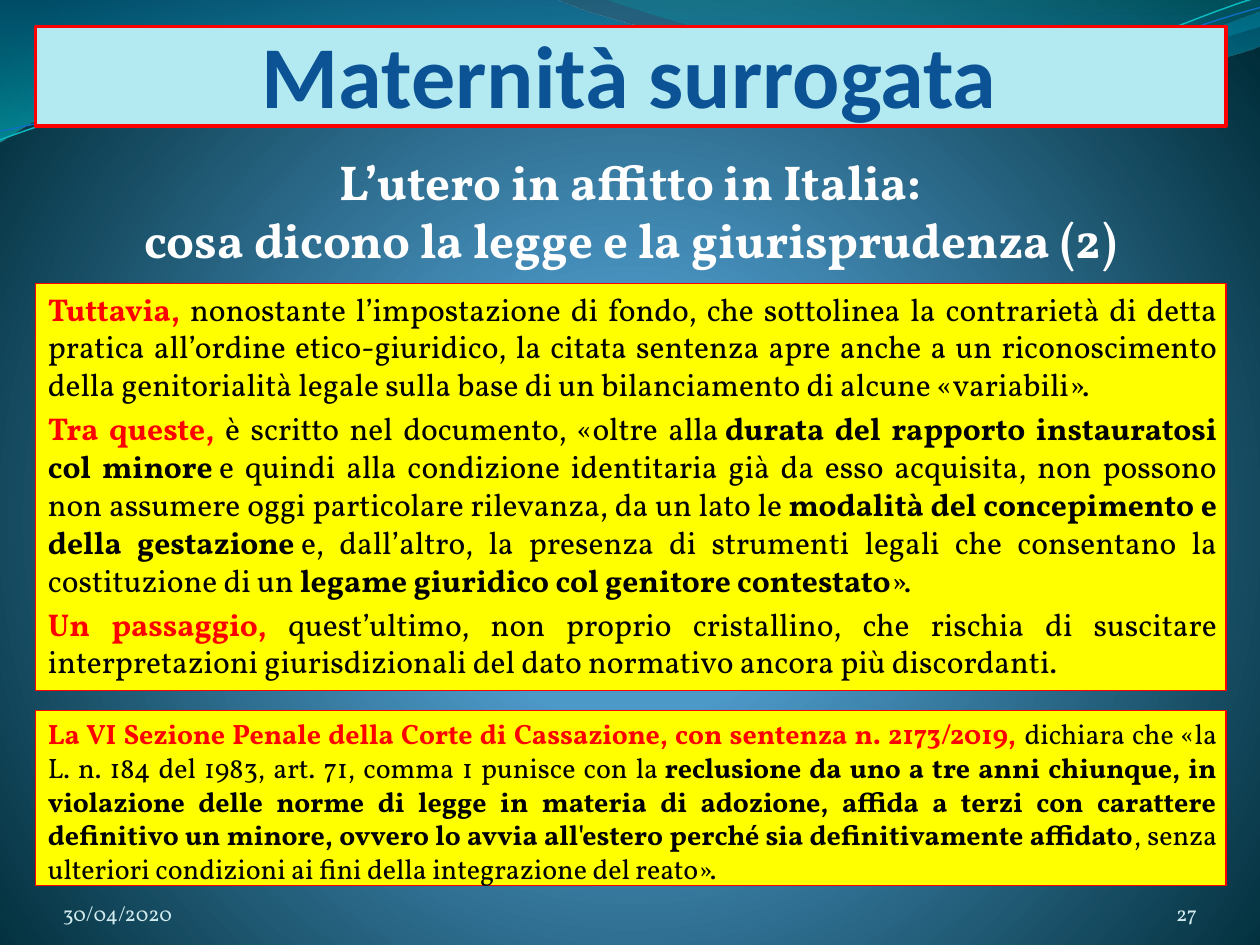
import math
from dataclasses import dataclass
from typing import Optional

import lxml.etree
import pptx
import pptx.dml.color
import pptx.enum.shapes
import pptx.enum.text
import pptx.oxml
import pptx.oxml.ns
import pptx.util

Inches = pptx.util.Inches
Pt = pptx.util.Pt
ALIGN = pptx.enum.text.PP_ALIGN
ANCHOR = pptx.enum.text.MSO_ANCHOR

COLORS = {
    "title_fill": "B3EAF2", "title": "0B5394", "red": "FF0000",
    "yellow": "FFFF00", "black": "000000", "white": "FFFFFF",
    "footer": "D1EAEE", "line_teal": "0AB8BF", "line_blue": "0F6FC6",
}
BODY_FONT = "Vollkorn"
NBSP = chr(160)


@dataclass
class Run:
    text: str
    color: str = "black"
    bold: bool = False


@dataclass
class Panel:
    box: tuple[float, float, float, float]
    paragraphs: list[list[Run]]
    size: float
    align: ALIGN = ALIGN.JUSTIFY
    anchor: ANCHOR = ANCHOR.TOP
    font: str = BODY_FONT
    fill: Optional[str] = None
    line_width: float = 0
    margins: tuple[float, float, float, float] = (0, 0.05, 0.02, 0.05)
    indent: float = 0
    space_before: float = 0


@dataclass
class Wave:
    start: tuple[float, float]
    segments: list[tuple[float, ...]]
    stops: Optional[list[tuple[int, str, int]]] = None
    color: str = ""
    width: float = 0
    rotation: float = 0
    center: tuple[float, float] = (0, 0)


def rgb(name: str) -> pptx.dml.color.RGBColor:
    return pptx.dml.color.RGBColor.from_string(COLORS[name])


def set_values(target, values: dict) -> None:
    for name, value in values.items():
        setattr(target, name, value)


def set_gradient(fill, owner, stops: list[tuple[int, str, int]], direction: str) -> None:
    fill.gradient()
    gradient = owner.xpath(".//a:gradFill")[0]
    for child in list(gradient):
        gradient.remove(child)
    stop_list = "".join(
        f'<a:gs pos="{position * 1000}"><a:srgbClr val="{color}">'
        f'<a:alpha val="{alpha * 1000}"/></a:srgbClr></a:gs>'
        for position, color, alpha in stops
    )
    namespace = pptx.oxml.ns.nsdecls("a")
    gradient.append(pptx.oxml.parse_xml(f"<a:gsLst {namespace}>{stop_list}</a:gsLst>"))
    gradient.append(pptx.oxml.parse_xml(direction.format(namespace=namespace)))


def turn_back(point: tuple[float, float], wave: Wave) -> tuple[float, float]:
    angle = math.radians(-wave.rotation)
    dx, dy = point[0] - wave.center[0], point[1] - wave.center[1]
    return (wave.center[0] + dx * math.cos(angle) - dy * math.sin(angle),
            wave.center[1] + dx * math.sin(angle) + dy * math.cos(angle))


def bend_segments(shape, segments: list[tuple[float, ...]]) -> None:
    lines = iter(shape.element.xpath(".//a:lnTo"))
    for segment in segments:
        group = [next(lines) for _ in range(len(segment) // 2)]
        if len(group) == 3:
            curve = lxml.etree.Element(pptx.oxml.ns.qn("a:cubicBezTo"))
            group[0].addprevious(curve)
            for line in group:
                curve.append(line[0])
                line.getparent().remove(line)


def draw_wave(slide, wave: Wave) -> None:
    points = [wave.start]
    for segment in wave.segments:
        points += zip(segment[::2], segment[1::2])
    emu = [tuple(Inches(value) for value in turn_back(point, wave)) for point in points]
    builder = slide.shapes.build_freeform(*emu[0], scale=1.0)
    builder.add_line_segments(emu[1:], close=wave.stops is not None)
    shape = builder.convert_to_shape()
    bend_segments(shape, wave.segments)
    shape.rotation = wave.rotation
    shape.shadow.inherit = False
    if wave.stops:
        set_gradient(shape.fill, shape.element, wave.stops, '<a:lin {namespace} ang="5400000" scaled="1"/>')
        shape.line.fill.background()
    else:
        shape.fill.background()
        shape.line.color.rgb = rgb(wave.color)
        shape.line.width = Pt(wave.width)


def draw_panel(slide, panel: Panel) -> None:
    box = [Inches(value) for value in panel.box]
    if panel.fill:
        shape = slide.shapes.add_shape(pptx.enum.shapes.MSO_SHAPE.RECTANGLE, *box)
        shape.shadow.inherit = False
        shape.fill.solid()
        shape.fill.fore_color.rgb = rgb(panel.fill)
        shape.line.color.rgb = rgb("red")
        shape.line.width = Pt(panel.line_width)
    else:
        shape = slide.shapes.add_textbox(*box)
    frame = shape.text_frame
    sides = ("margin_left", "margin_top", "margin_right", "margin_bottom")
    margins = {side: Inches(value) for side, value in zip(sides, panel.margins)}
    set_values(frame, {"word_wrap": True, "vertical_anchor": panel.anchor, **margins})
    for index, runs in enumerate(panel.paragraphs):
        paragraph = frame.add_paragraph() if index else frame.paragraphs[0]
        set_values(paragraph, {"alignment": panel.align, "space_before": Pt(panel.space_before)})
        if panel.indent:
            properties = paragraph._p.get_or_add_pPr()
            set_margins = {"marL": panel.indent, "marR": 0.05, "indent": 0}
            for name, value in set_margins.items():
                properties.set(name, str(Inches(value)))
        for item in runs:
            run = paragraph.add_run()
            run.text = item.text
            set_values(run.font, {"name": panel.font, "size": Pt(panel.size), "bold": item.bold})
            run.font.color.rgb = rgb(item.color)


TILT = {"rotation": 357.3, "center": (4.99, 0.58)}
WAVES = [
    Wave((0, 0), [(4.4, -0.01), (4.76, 0.17, 6.64, 0.63, 7.58, 0.63), (8.53, 0.63, 9.58, 0.26, 10, 0.09),
                  (10.01, 0.36), (9.83, 0.44, 8.7, 0.76, 7.46, 0.75), (6.22, 0.75, 3.82, 0.28, 2.57, 0.34),
                  (1.29, 0.36, 0.46, 0.83, -0.01, 1.13)], [(0, "0074A1", 45), (100, "00C6CF", 55)]),
    Wave((4.79, -0.01), [(5.09, 0.11, 6.82, 0.62, 7.69, 0.65), (8.56, 0.69, 9.61, 0.32, 10, 0.21), (10, 0)],
         [(0, "00A1A9", 30), (80, "008BBF", 45)]),
    Wave((0, 1.11), [(0.48, 0.93, 1.58, 0.57, 2.77, 0.52), (3.95, 0.47, 5.93, 0.89, 7.13, 0.8),
                     (8.33, 0.71, 9.38, 0.15, 9.98, -0.02)], color="line_teal", width=0.85, **TILT),
    Wave((0, 1.04), [(0.47, 0.96, 1.64, 0.61, 2.83, 0.56), (4.03, 0.51, 5.97, 0.84, 7.17, 0.75),
                     (8.36, 0.67, 9.41, 0.21, 10, 0.06)], color="line_blue", width=0.75, **TILT),
]
LEFT, WIDTH = 0.28, 9.45
YELLOW_BOX = {"fill": "yellow", "line_width": 0.75, "indent": 0.1}
FOOTER = {"size": 12, "anchor": ANCHOR.BOTTOM, "margins": (0, 0, 0, 0)}
PANELS = [
    Panel((LEFT, 0.21, WIDTH, 0.79), [[Run("Maternità surrogata", "title", True)]], 50.4, ALIGN.CENTER,
          ANCHOR.BOTTOM, "Calibri", "title_fill", 2, (0, 0, 0.02, 0)),
    Panel((LEFT, 2.25, WIDTH, 3.23), [
        [Run("Tuttavia, ", "red", True),
         Run("nonostante l’impostazione di fondo, che sottolinea la contrarietà di detta pratica all’ordine etico-giuridico, la citata sentenza apre anche a un riconoscimento della genitorialità legale sulla base di un bilanciamento di alcune «variabili».")],
        [Run("Tra queste, ", "red", True),
         Run("è scritto nel documento, «oltre alla" + NBSP),
         Run("durata del rapporto instauratosi col minore" + NBSP, bold=True),
         Run("e quindi alla condizione identitaria già da esso acquisita, non possono non assumere oggi particolare rilevanza, da un lato le" + NBSP),
         Run("modalità del concepimento e della gestazione" + NBSP, bold=True),
         Run("e, dall’altro, la presenza di strumenti legali che consentano la costituzione di un" + NBSP),
         Run("legame giuridico col genitore contestato", bold=True),
         Run("».")],
        [Run("Un passaggio, ", "red", True),
         Run("quest’ultimo, non proprio cristallino, che rischia di suscitare interpretazioni giurisdizionali del dato normativo ancora più discordanti.")],
    ], 18, space_before=3.6, **YELLOW_BOX),
    Panel((0.5, 6.95, 2.33, 0.4), [[Run("30/04/2020", "footer")]], align=ALIGN.LEFT, **FOOTER),
    Panel((8.67, 6.95, 0.83, 0.4), [[Run("27", "footer")]], align=ALIGN.RIGHT, **FOOTER),
    Panel((LEFT, 1.15, WIDTH, 1.04), [
        [Run("L’utero in affitto in Italia:", "white", True)],
        [Run("cosa dicono la legge e la giurisprudenza (2)", "white", True)],
    ], 28, ALIGN.CENTER, margins=(0.1, 0.05, 0.1, 0.05)),
    Panel((LEFT, 5.64, WIDTH, 1.39), [
        [Run("La VI Sezione Penale della Corte di Cassazione, con sentenza n. 2173/2019, ", "red", True),
         Run("dichiara che «la L. n. 184 del 1983, art. 71, comma 1 punisce con la" + NBSP),
         Run("reclusione da uno a tre anni chiunque, in violazione delle norme di legge in materia di adozione, affida a terzi con carattere definitivo un minore, ovvero lo avvia all'estero perché sia definitivamente affidato", bold=True),
         Run(", senza ulteriori condizioni ai fini della integrazione del reato».")],
    ], 16, space_before=3.2, **YELLOW_BOX),
]


def main() -> None:
    presentation = pptx.Presentation()
    set_values(presentation, {"slide_width": Inches(10), "slide_height": Inches(7.5)})
    slide = presentation.slides.add_slide(presentation.slide_layouts[6])
    set_gradient(
        slide.background.fill, slide.element,
        [(0, "4AA0D6", 100), (25, "4C98C7", 100), (100, "002C38", 100)],
        '<a:path {namespace} path="circle"><a:fillToRect l="10000" t="110000" r="10000" b="100000"/></a:path>',
    )
    for wave in WAVES:
        draw_wave(slide, wave)
    for panel in PANELS:
        draw_panel(slide, panel)
    presentation.save("out.pptx")


if __name__ == "__main__":
    main()
